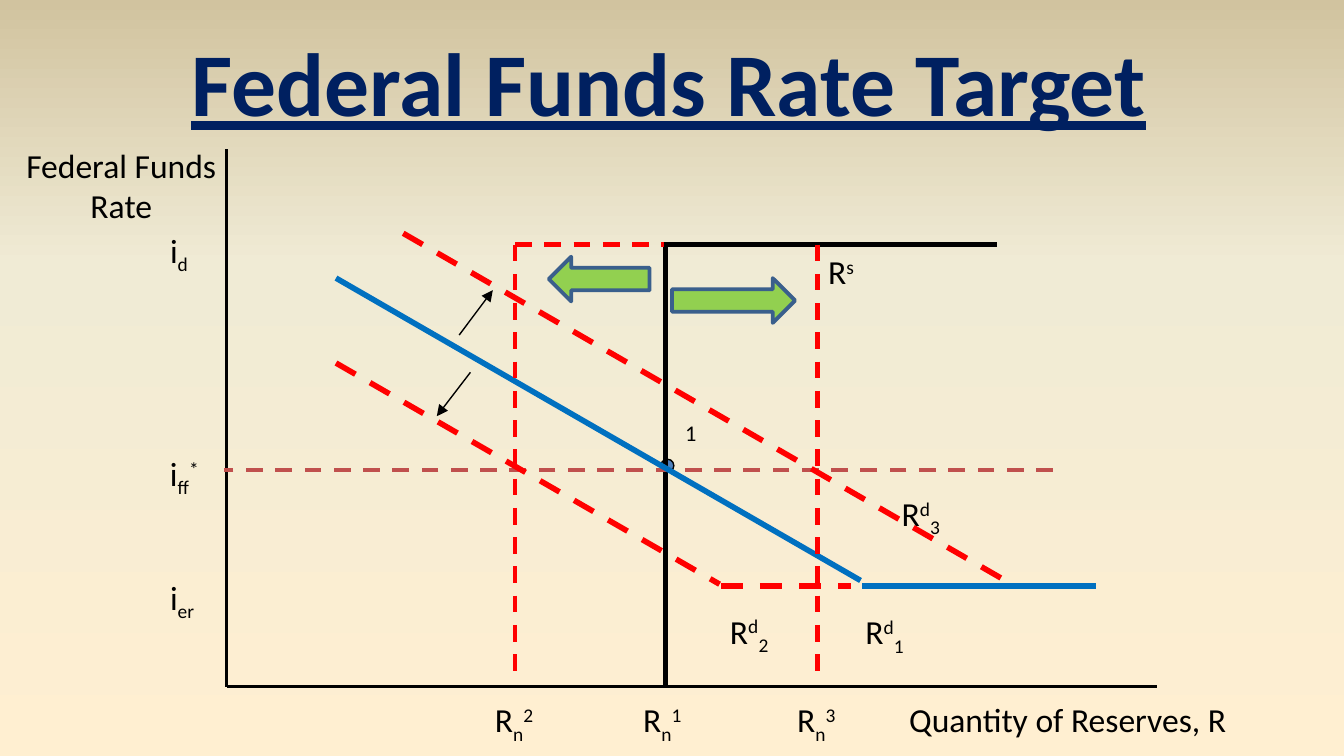
from copy import deepcopy
from typing import NamedTuple

from lxml import etree
from pptx import Presentation
from pptx import util as u
from pptx.dml import color
from pptx.enum import dml, shapes, text
from pptx.oxml import ns

FONT = "Calibri"
COLORS = {
    "black": "000000", "navy": "002060", "blue": "0070C0", "red": "FF0000",
    "brick": "C0504D", "green": "92D050", "steel": "3A5F8C", "dot": "4F81BD",
}
BACKGROUND = [(0, "FFEFD1"), (0.65, "F0EBD5"), (1, "D1C39F")]
SUB, SUP = -25000, 30000

# Key coordinates of the diagram, in points
AXIS_X, AXIS_Y = 121.5, 368
RATE_D, RATE_TARGET, RATE_ER = 131, 252, 314
RESERVES_1, RESERVES_2, RESERVES_3 = 356.5, 276, 438
CURVE_END = 311


class Stroke(NamedTuple):
    start: tuple[float, float]
    end: tuple[float, float]
    color: str = "black"
    width: float = 2.25
    dashed: bool = False
    arrow: bool = False


class Label(NamedTuple):
    left: float
    top: float
    width: float
    symbols: list[tuple[str, int]]
    wrap: bool = False
    size: float = 18


class BlockArrow(NamedTuple):
    kind: shapes.MSO_SHAPE
    left: float
    top: float
    width: float


def rgb(name: str) -> color.RGBColor:
    return color.RGBColor.from_string(COLORS[name])


def add_span(para, content: str, *, size: float = 18, ink: str = "black",
             bold: bool = False, underline: bool = False, shift: int = 0) -> None:
    span = para.add_run()
    span.text = content
    font = span.font
    font.name, font.size, font.color.rgb = FONT, u.Pt(size), rgb(ink)
    font.bold, font.underline = bold, underline
    if shift:
        span._r.get_or_add_rPr().set("baseline", str(shift))


def add_box(page, left: float, top: float, width: float, height: float, wrap: bool = False):
    box = page.shapes.add_textbox(*map(u.Pt, (left, top, width, height)))
    box.text_frame.word_wrap = wrap
    box.text_frame.auto_size = text.MSO_AUTO_SIZE.SHAPE_TO_FIT_TEXT
    return box


def draw_label(page, label: Label) -> None:
    box = add_box(page, label.left, label.top, label.width, label.size * 1.2 + 7.4, label.wrap)
    for content, shift in label.symbols:
        add_span(box.text_frame.paragraphs[0], content, size=label.size, shift=shift)


def draw_stroke(page, stroke: Stroke) -> None:
    line = page.shapes.add_connector(
        shapes.MSO_CONNECTOR.STRAIGHT, *map(u.Pt, (*stroke.start, *stroke.end)))
    line.line.color.rgb = rgb(stroke.color)
    line.line.width = u.Pt(stroke.width)
    if stroke.dashed:
        line.line.dash_style = dml.MSO_LINE.DASH
    if stroke.arrow:
        etree.SubElement(line.line._get_or_add_ln(), ns.qn("a:tailEnd"), type="triangle")
    etree.SubElement(line._element.spPr, ns.qn("a:effectLst"))


def draw_shape(page, kind: shapes.MSO_SHAPE, left: float, top: float, width: float,
               height: float, fill: str, outline: str, weight: float) -> None:
    shape = page.shapes.add_shape(kind, *map(u.Pt, (left, top, width, height)))
    shape.shadow.inherit = False
    shape.fill.solid()
    shape.fill.fore_color.rgb = rgb(fill)
    shape.line.color.rgb = rgb(outline)
    shape.line.width = u.Pt(weight)


def paint_background(page) -> None:
    fill = page.background.fill
    fill.gradient()
    fill.gradient_angle = 90
    stop_list = page._element.find(".//" + ns.qn("a:gsLst"))
    stop_list.append(deepcopy(stop_list[0]))
    for stop, (position, shade) in zip(fill.gradient_stops, BACKGROUND):
        stop.position = position
        stop.color.rgb = color.RGBColor.from_string(shade)


def write_title(page) -> None:
    title = page.shapes.title
    title.left, title.top, title.width, title.height = map(u.Pt, (93, 11, 530.5, 65.5))
    frame = title.text_frame
    frame.word_wrap = False
    frame.auto_size = text.MSO_AUTO_SIZE.NONE
    frame.vertical_anchor = text.MSO_ANCHOR.TOP
    para = frame.paragraphs[0]
    para.alignment = text.PP_ALIGN.CENTER
    add_span(para, "Federal Funds Rate Target", size=48, ink="navy", bold=True, underline=True)


STROKES = [
    # Axes
    Stroke((AXIS_X, 80), (AXIS_X, AXIS_Y), width=1.5),
    Stroke((AXIS_X, AXIS_Y), (620, AXIS_Y), width=1.5),
    # Supply
    Stroke((RESERVES_1, AXIS_Y), (RESERVES_1, RATE_D)),
    Stroke((355, RATE_D), (534, RATE_D)),
    # Target rate
    Stroke((564, RATE_TARGET), (120, RATE_TARGET), "brick", dashed=True),
    # Demand
    Stroke((180, 149), (461, CURVE_END), "blue", 3),
    Stroke((462, RATE_ER), (587, RATE_ER), "blue", 3),
    Stroke((180, 194.5), (385.5, 313), "red", 3, True),
    Stroke((386, RATE_ER), (456, RATE_ER), "red", 3, True),
    Stroke((216, 125), (538.5, CURVE_END), "red", 3, True),
    # Demand shifts
    Stroke((252, 199.5), (234, 223), width=0.75, arrow=True),
    Stroke((246, 179.5), (264, 155.5), width=0.75, arrow=True),
    # Shifted supply
    Stroke((RESERVES_3, RATE_D), (RESERVES_3, 365), "red", dashed=True),
    Stroke((RESERVES_2, RATE_D), (RESERVES_2, 365), "red", dashed=True),
    Stroke((RESERVES_2, RATE_D), (355.5, RATE_D), "red", dashed=True),
]

RATE_LABELS = [
    Label(84, 119.5, 37, [("i", 0), ("d", SUB)], wrap=True),
    Label(84, 239, 55, [("i", 0), ("ff", SUB), ("*", SUP)]),
    Label(84, 305.5, 37, [("i", 0), ("er", SUB)], wrap=True),
]
DEMAND_LABELS = [
    Label(left, top, 41, [("R", 0), ("d", SUP), (number, SUB)])
    for left, top, number in [(456.5, 324, "1"), (384, 323.5, "2"), (476, 260.5, "3")]
]
RESERVE_LABELS = [
    Label(left, 371, 41, [("R", 0), ("n", SUB), (number, SUP)])
    for left, number in [(337.5, "1"), (258, "2"), (420, "3")]
]
OTHER_LABELS = [
    Label(436.5, 131, 34, [("R", 0), ("s", SUP)]),
    Label(360, 221, 21, [("1", 0)], size=12),
    Label(480, 371, 212, [("Quantity of Reserves, R", 0)], wrap=True),
]
BLOCK_ARROWS = [
    BlockArrow(shapes.MSO_SHAPE.LEFT_ARROW, 294, 137.5, 54),
    BlockArrow(shapes.MSO_SHAPE.RIGHT_ARROW, 360, 149, 66),
]


def main() -> None:
    deck = Presentation()
    deck.slide_width, deck.slide_height = u.Pt(720), u.Pt(405)
    page = deck.slides.add_slide(deck.slide_layouts[5])
    paint_background(page)
    write_title(page)

    # Equilibrium point lies beneath the curves
    draw_shape(page, shapes.MSO_SHAPE.OVAL, 354, 246, 7, 7, "dot", "black", 0.75)
    for stroke in STROKES:
        draw_stroke(page, stroke)
    for arrow in BLOCK_ARROWS:
        draw_shape(page, *arrow, 24, "green", "steel", 2)

    # Labels, with the two-line name of the vertical axis
    axis_name = add_box(page, 0, 74, 130, 50.5).text_frame
    for para, content in zip((axis_name.paragraphs[0], axis_name.add_paragraph()),
                             ("Federal Funds", "Rate")):
        para.alignment = text.PP_ALIGN.CENTER
        add_span(para, content)
    for label in RATE_LABELS + DEMAND_LABELS + RESERVE_LABELS + OTHER_LABELS:
        draw_label(page, label)
    deck.save("out.pptx")


if __name__ == "__main__":
    main()
